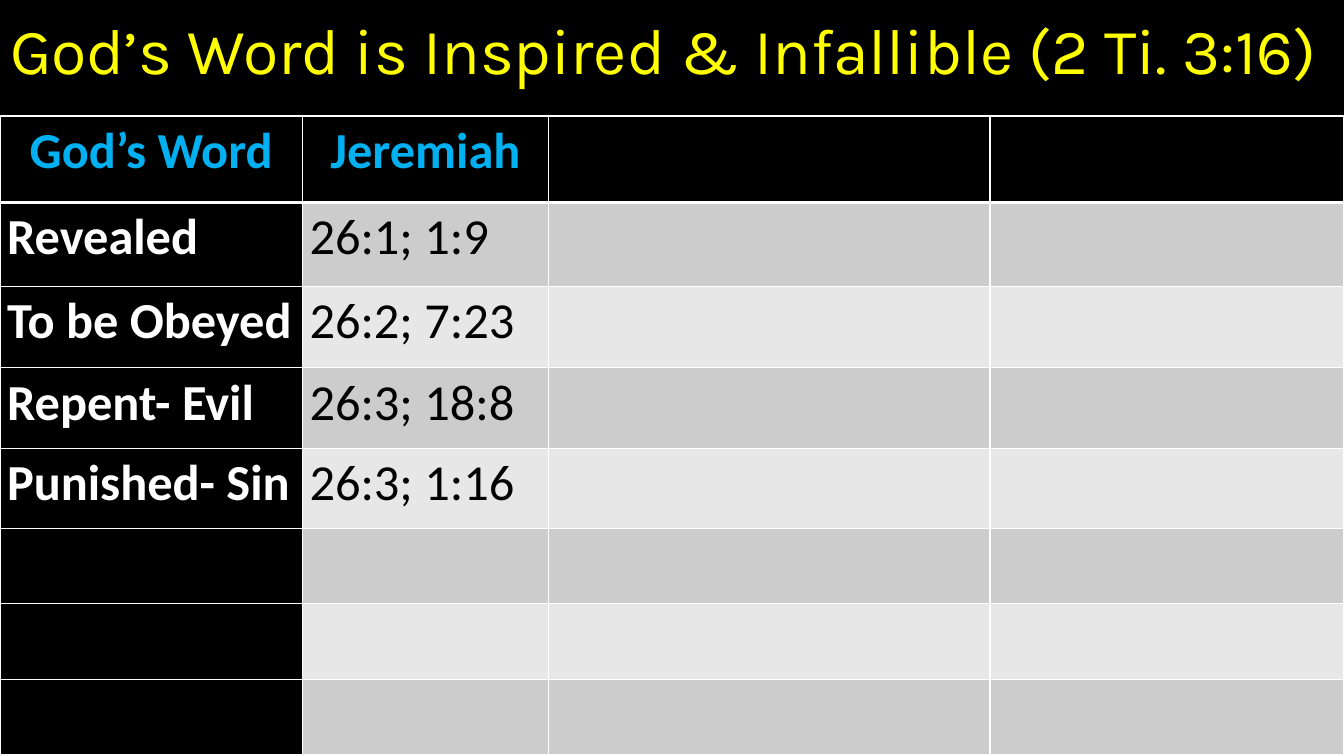
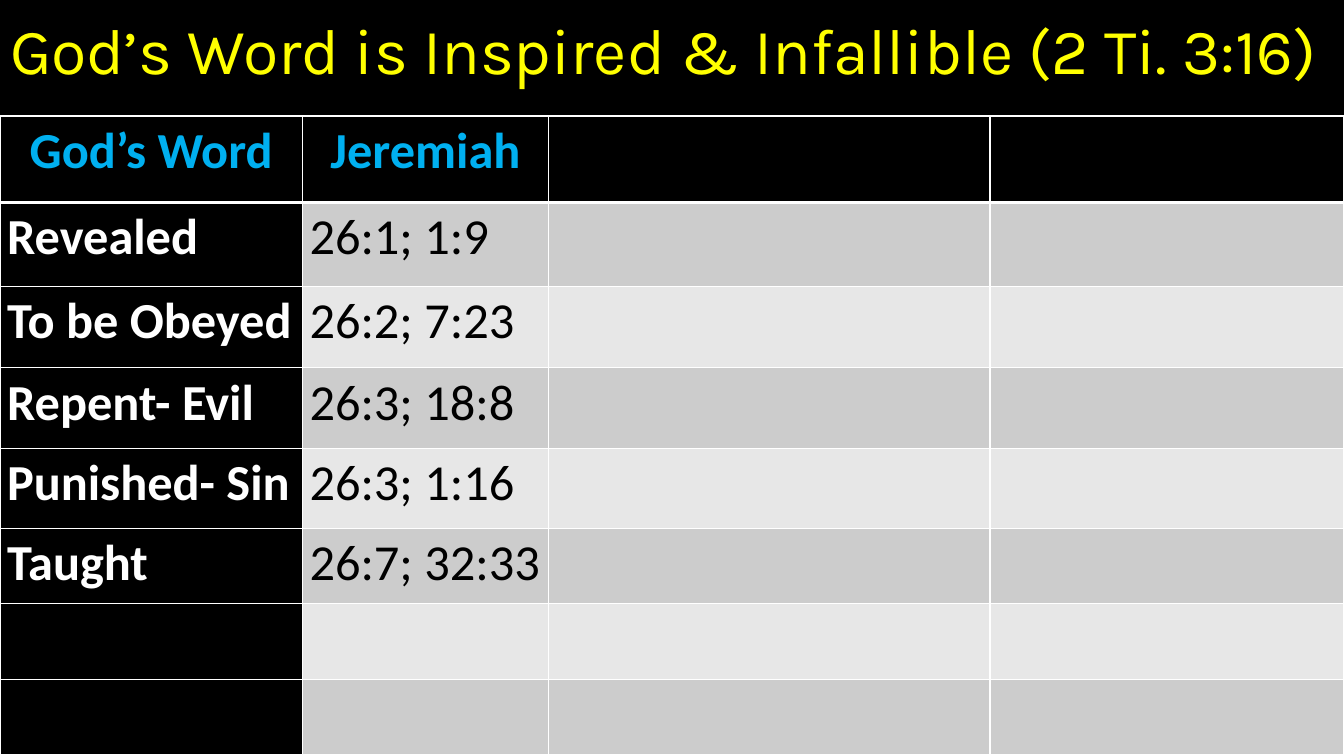
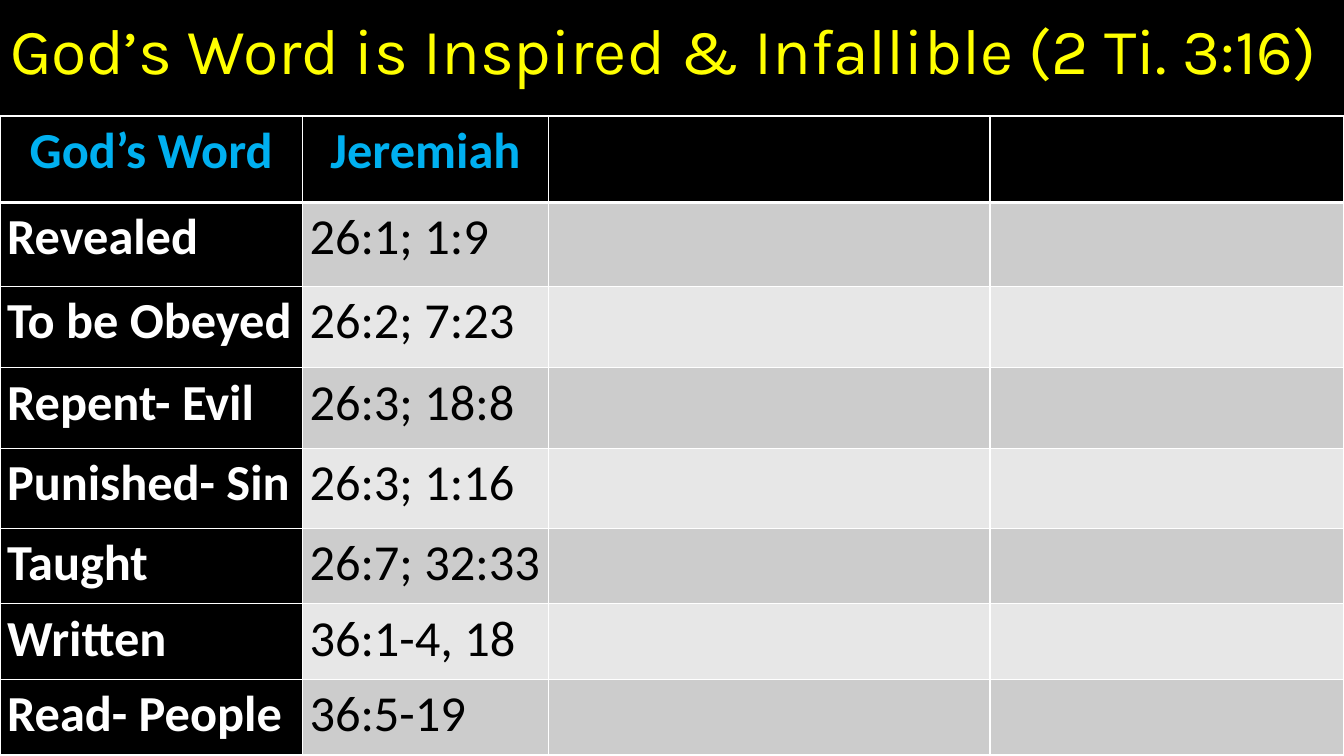
from lxml.etree import SubElement
from pptx import Presentation
from pptx.dml.color import RGBColor as RGB
from pptx.enum.text import MSO_ANCHOR as ANCHOR, MSO_AUTO_SIZE as AUTO, PP_ALIGN as ALIGN
from pptx.oxml.ns import qn
from pptx.util import Inches, Pt

COLORS = {
    "black": "000000", "white": "FFFFFF", "title": "FFFF00", "head": "00B0F0",
    "band_dark": "CCCCCC", "band_light": "E7E7E7",
}
TITLE = "God’s Word is Inspired & Infallible (2 Ti. 3:16)"
HEADER = ("God’s Word", "Jeremiah")
VERSES = [
    ("Revealed", "26:1; 1:9"),
    ("To be Obeyed", "26:2; 7:23"),
    ("Repent- Evil", "26:3; 18:8"),
    ("Punished- Sin", "26:3; 1:16"),
    ("Taught", "26:7; 32:33"),
    ("Written", "36:1-4, 18"),
    ("Read- People", "36:5-19"),
]
COL_WIDTHS = (3, 2.44, 4.38, 3.51)
ROW_HEIGHTS = (0.86, 0.83, 0.81, 0.8, 0.79, 0.75, 0.75, 0.75)
SHOWN_VERSES = (4, 5, 7)  # verses revealed on each slide


def color(name):
    return RGB.from_string(COLORS[name])


class Deck:
    def __init__(self):
        self.prs = Presentation()
        self.prs.slide_width, self.prs.slide_height = Inches(13.33), Inches(7.5)
        self.slide = None

    def add_slide(self):
        self.slide = self.prs.slides.add_slide(self.prs.slide_layouts[5])
        fill = self.slide.background.fill
        fill.solid()
        fill.fore_color.rgb = color("black")

    def style(self, p, font, size, color_name, bold, align, spacing):
        p.alignment, p.line_spacing = align, spacing
        p.font.name, p.font.size, p.font.bold = font, Pt(size), bold
        p.font.color.rgb = color(color_name)

    def title(self, text):
        sp = self.slide.shapes.title
        sp.left, sp.top, sp.width, sp.height = 0, 0, Inches(13.33), Inches(1.06)
        tf = sp.text_frame
        tf.text = text
        tf.word_wrap, tf.auto_size = True, AUTO.NONE
        tf.vertical_anchor = ANCHOR.MIDDLE
        self.style(tf.paragraphs[0], "Karla", 46, "title", False, ALIGN.LEFT, 0.9)

    def borders(self, cell, widths):
        tc_pr = cell._tc.get_or_add_tcPr()
        for side, width in widths.items():
            ln = SubElement(tc_pr, qn(f"a:ln{side}"), w=str(Pt(width)))
            SubElement(SubElement(ln, qn("a:solidFill")), qn("a:srgbClr"), val=COLORS["white"])

    def cell(self, cell, row, col, text):
        # Header row and first column are black, the rest is banded
        is_head, is_label = row == 0, col == 0
        band = "band_dark" if row % 2 else "band_light"
        self.borders(cell, {"L": 1, "R": 1, "T": 3 if row == 1 else 1, "B": 3 if is_head else 1})
        cell.fill.solid()
        cell.fill.fore_color.rgb = color("black" if is_head or is_label else band)
        cell.margin_left = cell.margin_right = Inches(0.07)
        cell.margin_top = cell.margin_bottom = 0
        if text:
            cell.text = text
            ink = "head" if is_head else "white" if is_label else "black"
            self.style(cell.text_frame.paragraphs[0], "Calibri", 36, ink, is_head or is_label,
                       ALIGN.CENTER if is_head else ALIGN.LEFT, 1.07)

    def table(self, rows):
        table = self.slide.shapes.add_table(
            len(ROW_HEIGHTS), len(COL_WIDTHS), 0, Inches(1.15),
            Inches(sum(COL_WIDTHS)), Inches(sum(ROW_HEIGHTS))).table
        table.first_row = table.horz_banding = False
        for column, width in zip(table.columns, COL_WIDTHS):
            column.width = Inches(width)
        for r, height in enumerate(ROW_HEIGHTS):
            table.rows[r].height = Inches(height)
            texts = rows[r] if r < len(rows) else ()
            for c in range(len(COL_WIDTHS)):
                self.cell(table.cell(r, c), r, c, texts[c] if c < len(texts) else "")


def main():
    deck = Deck()
    # Each slide shows more of the same table
    for count in SHOWN_VERSES:
        deck.add_slide()
        deck.title(TITLE)
        deck.table([HEADER] + VERSES[:count])
    deck.prs.save("out.pptx")


if __name__ == "__main__":
    main()
